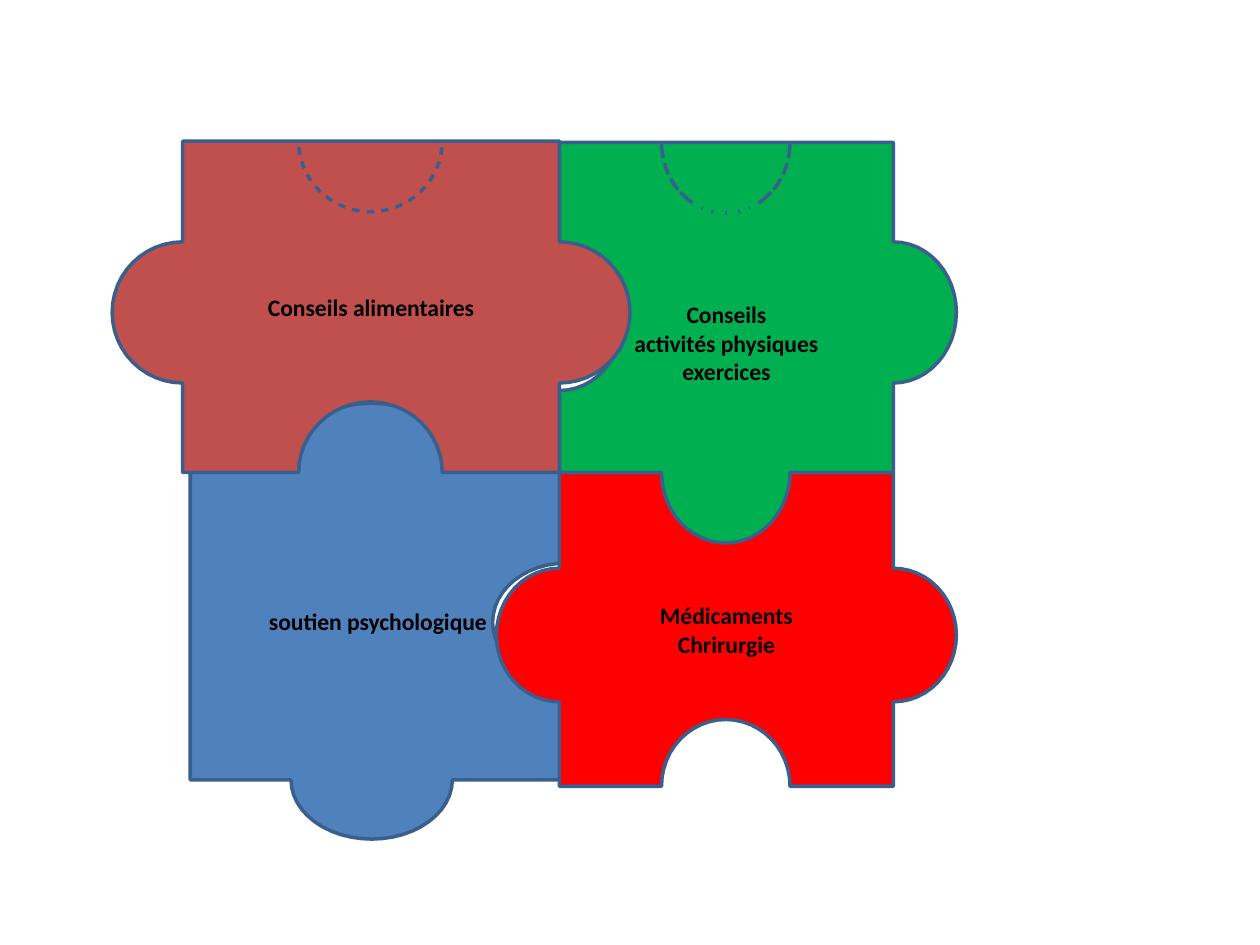
from math import cos, radians, sin

from pptx import Presentation
from pptx.dml.color import RGBColor as RGB
from pptx.enum.text import MSO_ANCHOR as Anchor, PP_ALIGN as Align
from pptx.util import Inches, Pt

STEPS = 24


def paint(target, color):
    """Give a fill or a line one solid colour."""
    target.solid()
    target.fore_color.rgb = RGB.from_string(color)


def arc(mid, half, depth, start=0, end=180, sign=1, steps=STEPS):
    """Points (along, out) of a half ellipse on an edge; a negative depth cuts in."""
    turns = [radians(start + (end - start) * i / steps) for i in range(steps + 1)]
    return [(mid - sign * half * cos(a), depth * sin(a)) for a in turns]


def outline(box, bumps):
    """Walk clockwise round the box, adding the bumps of each side."""
    x, y, w, h = box
    sides = {
        "top": (1, (x, y), lambda s, d: (x + s, y - d)),
        "right": (1, (x + w, y), lambda s, d: (x + w + d, y + s)),
        "bottom": (-1, (x + w, y + h), lambda s, d: (x + s, y + h + d)),
        "left": (-1, (x, y + h), lambda s, d: (x - d, y + s)),
    }
    points = []
    for side, (sign, corner, place) in sides.items():
        points.append(corner)
        for bump in bumps.get(side, []):
            points += [place(s, d) for s, d in arc(*bump, sign=sign)]
    return points


def emu(points):
    return [(Inches(x), Inches(y)) for x, y in points]


def add_text(frame, lines):
    frame.word_wrap = True
    frame.vertical_anchor = Anchor.MIDDLE
    frame.text = "\n".join(lines)
    for para in frame.paragraphs:
        para.alignment = Align.CENTER
        font = para.runs[0].font
        font.name, font.size, font.bold = "Calibri", Pt(13.5), True
        font.color.rgb = RGB.from_string("000000")


def add_piece(slide, box, color, lines, bumps, socket=None, dashes=()):
    """Draw a puzzle piece; dashes are angle spans along a socket under its top."""
    first, *rest = emu(outline(box, bumps))
    pen = slide.shapes.build_freeform(*first, scale=1.0)
    pen.add_line_segments(rest, close=True)
    for span in dashes:
        first, *rest = emu((box[0] + s, box[1] + d)
                           for s, d in arc(*socket, *span, steps=3))
        pen.move_to(*first)
        pen.add_line_segments(rest, close=False)
    piece = pen.convert_to_shape()
    piece.shadow.inherit = False
    paint(piece.fill, color)
    paint(piece.line.fill, "3A5F8C")
    piece.line.width = Pt(2)
    add_text(piece.text_frame, lines)


def main():
    deck = Presentation()
    deck.slide_width, deck.slide_height = Inches(10), Inches(7.5)
    slide = deck.slides.add_slide(deck.slide_layouts[6])

    knob = (1.44, 0.64, 0.47)
    add_piece(slide, (1.51, 3.67, 2.98, 2.52), "4F81BD",
              ["soutien psychologique"],
              {"top": [knob], "right": [(1.27, 0.47, -0.58)], "bottom": [knob]})

    knob, notch = (1.29, 0.53, 0.5), (1.32, 0.51, -0.53)
    add_piece(slide, (4.44, 3.75, 2.65, 2.49), "FF0000",
              ["Médicaments", "Chrirurgie"],
              {"top": [notch], "right": [knob], "bottom": [notch], "left": [knob]})

    knob, socket = (1.35, 0.56, 0.5), (1.32, 0.51, 0.56)
    falling = [(0, 13), (17, 27), (31, 42), (45, 59), (68, 69), (77, 79)]
    rising = [(180 - b, 180 - a) for a, b in falling]
    crescent = [(1.41, 0.56, -0.5), (1.41, 0.56, 0.5, 180, 90), (*knob, 90, 180)]
    add_piece(slide, (4.44, 1.13, 2.65, 2.62), "00B050",
              ["Conseils", "activités physiques", "exercices"],
              {"right": [knob], "bottom": [socket], "left": crescent},
              socket, falling + [(89, 91)] + rising)

    knob, socket = (1.36, 0.56, 0.56), (1.49, 0.57, 0.56)
    dashes = [(5 + 11.7 * i, 11 + 11.7 * i) for i in range(15)]
    add_piece(slide, (1.45, 1.12, 2.99, 2.63), "C0504D",
              ["Conseils alimentaires"],
              {"right": [knob], "bottom": [(1.49, 0.57, -0.56)], "left": [knob]},
              socket, dashes)

    deck.save("out.pptx")


if __name__ == "__main__":
    main()
